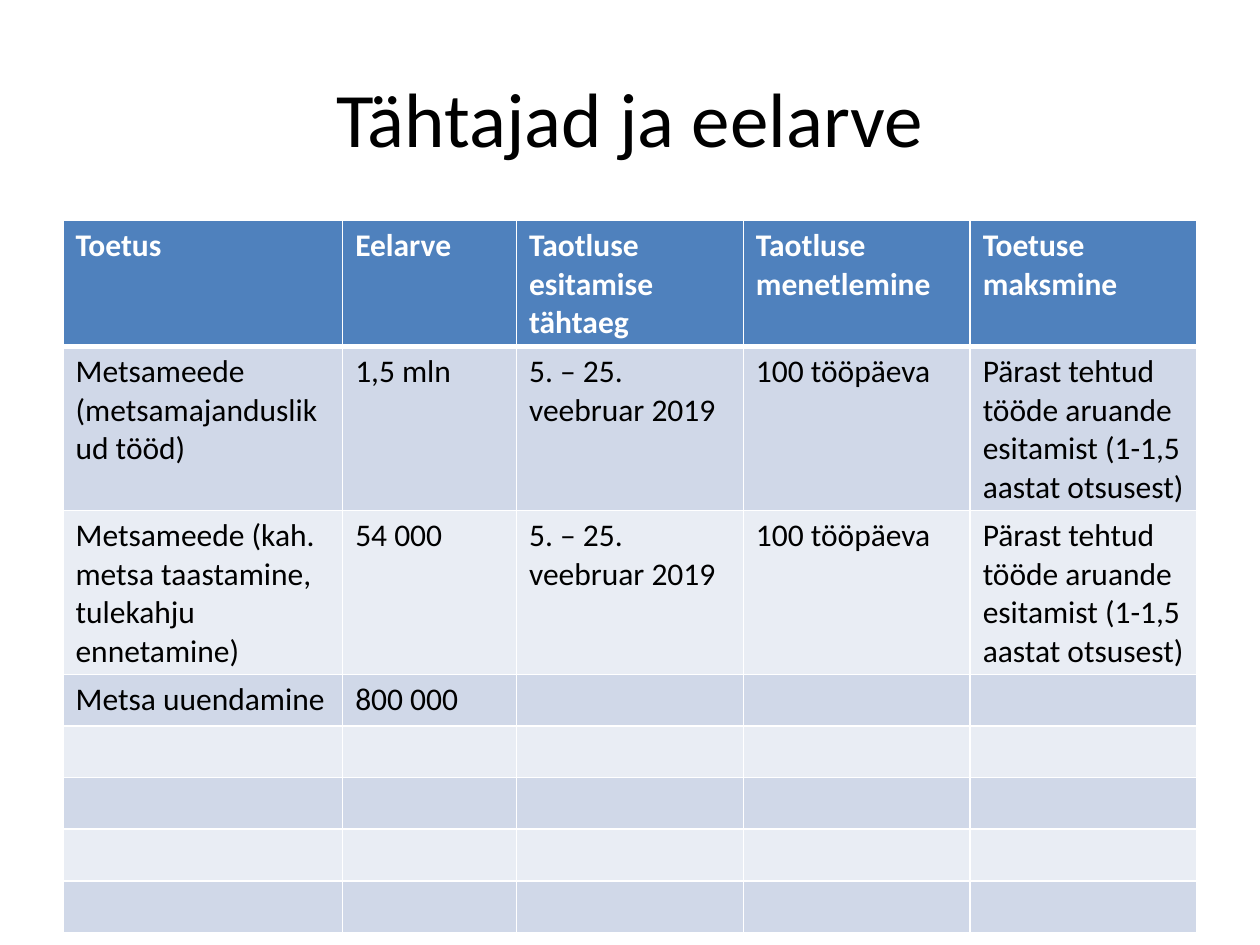
from typing import NamedTuple

from lxml.etree import SubElement
from pptx import Presentation
from pptx.dml.color import RGBColor
from pptx.enum.text import MSO_ANCHOR as Anchor, PP_ALIGN as Align
from pptx.oxml.ns import qn
from pptx.util import Inches, Pt

FONT = "Calibri"
BLACK = RGBColor(0x00, 0x00, 0x00)
WHITE = RGBColor(0xFF, 0xFF, 0xFF)
BLUE = RGBColor(0x4F, 0x81, 0xBD)
DARK = RGBColor(0xD0, 0xD8, 0xE8)
LIGHT = RGBColor(0xE9, 0xED, 0xF4)

THIN, THICK = 1, 3
ROWS, ROW_H = 8, 0.41
WIDTHS = (2.22, 1.38, 1.8, 1.8, 1.8)


class Grant(NamedTuple):
    name: str = ""
    budget: str = ""
    due: str = ""
    review: str = ""
    payment: str = ""


DUE = "5. – 25. veebruar 2019"
REVIEW = "100 tööpäeva"
PAYMENT = "Pärast tehtud tööde aruande esitamist (1-1,5 aastat otsusest)"

HEAD = Grant("Toetus", "Eelarve", "Taotluse esitamise tähtaeg",
             "Taotluse menetlemine", "Toetuse maksmine")
GRANTS = [
    Grant("Metsameede (metsamajanduslikud tööd)", "1,5 mln",
          DUE, REVIEW, PAYMENT),
    Grant("Metsameede (kah. metsa taastamine, tulekahju ennetamine)", "54 000",
          DUE, REVIEW, PAYMENT),
    Grant("Metsa uuendamine", "800 000"),
]


def style(par, size: int, color: RGBColor, bold: bool = False) -> None:
    font = par.font
    font.name, font.size, font.bold = FONT, Pt(size), bold
    font.color.rgb = color


def add_edges(cell, top: int, bottom: int) -> None:
    """Draw white borders; they must come before the cell's fill."""
    props = cell._tc.get_or_add_tcPr()
    edges = {"lnL": THIN, "lnR": THIN, "lnT": top, "lnB": bottom}
    for tag, width in edges.items():
        line = SubElement(props, qn(f"a:{tag}"), w=str(Pt(width)))
        fill = SubElement(line, qn("a:solidFill"))
        SubElement(fill, qn("a:srgbClr"), val=str(WHITE))


def fill_cell(cell, text: str, row: int) -> None:
    head = row == 0
    add_edges(cell, THICK if row == 1 else THIN, THICK if head else THIN)
    cell.fill.solid()
    cell.fill.fore_color.rgb = BLUE if head else DARK if row % 2 else LIGHT
    cell.text = text
    style(cell.text_frame.paragraphs[0], 18, WHITE if head else BLACK, head)


def add_title(slide, text: str) -> None:
    box = slide.shapes.add_textbox(Inches(0.5), Inches(0.3),
                                   Inches(9), Inches(1.25))
    frame = box.text_frame
    frame.word_wrap = True
    frame.vertical_anchor = Anchor.MIDDLE
    frame.text = text
    par = frame.paragraphs[0]
    par.alignment = Align.CENTER
    style(par, 44, BLACK)


def add_grid(slide) -> None:
    table = slide.shapes.add_table(
        ROWS, len(WIDTHS), Inches(0.5), Inches(1.75),
        Inches(sum(WIDTHS)), Inches(ROWS * ROW_H)).table
    for col, width in zip(table.columns, WIDTHS):
        col.width = Inches(width)
    # Rows after the last grant stay empty
    lines = [HEAD, *GRANTS]
    lines += [Grant()] * (ROWS - len(lines))
    for row, grant in enumerate(lines):
        table.rows[row].height = Inches(ROW_H)
        for col, text in enumerate(grant):
            fill_cell(table.cell(row, col), text, row)


def main() -> None:
    deck = Presentation()
    deck.slide_width, deck.slide_height = Inches(10), Inches(7.5)
    slide = deck.slides.add_slide(deck.slide_layouts[6])
    add_title(slide, "Tähtajad ja eelarve")
    add_grid(slide)
    deck.save("out.pptx")


if __name__ == "__main__":
    main()
